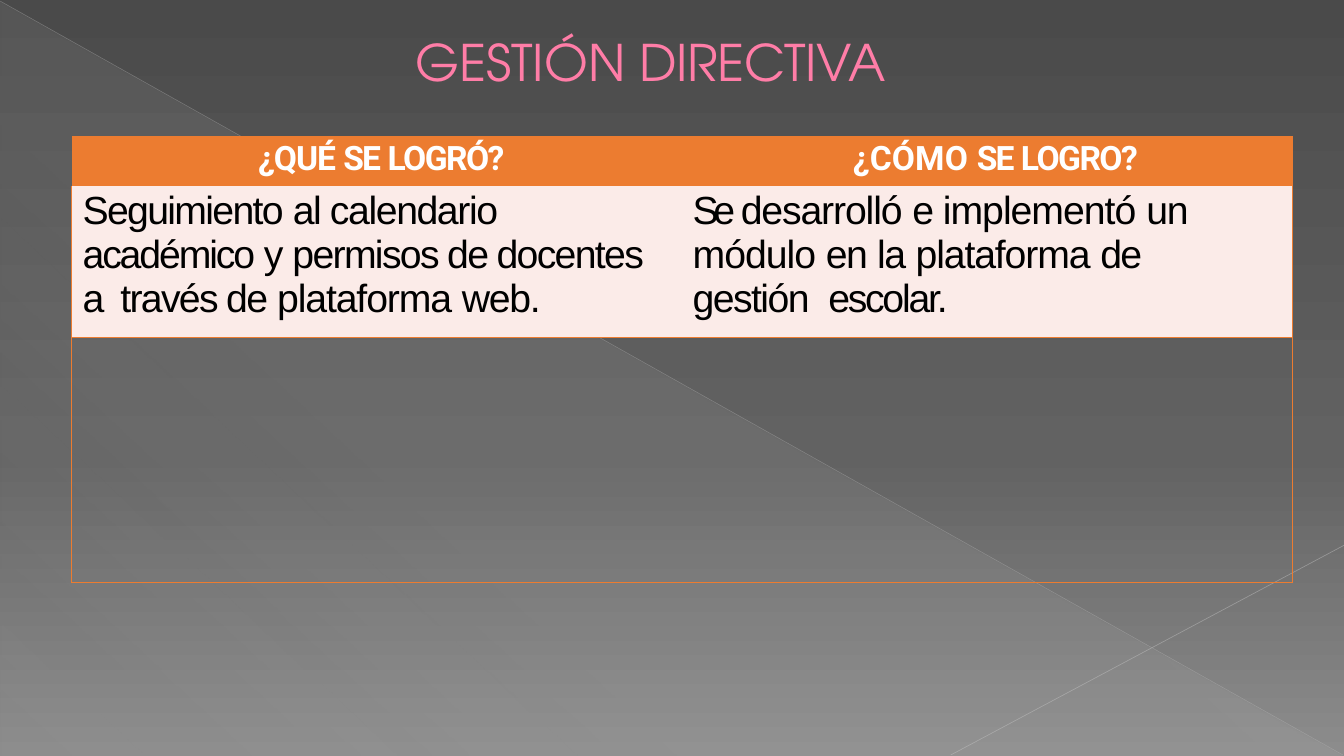
from lxml import etree
from pptx import Presentation
from pptx.dml.color import RGBColor
from pptx.enum.shapes import MSO_CONNECTOR, MSO_SHAPE
from pptx.enum.text import MSO_ANCHOR, MSO_AUTO_SIZE, PP_ALIGN
from pptx.oxml.ns import qn
from pptx.util import Inches, Pt

STRAIGHT = MSO_CONNECTOR.STRAIGHT
RIGHT_TRIANGLE = MSO_SHAPE.RIGHT_TRIANGLE
MIDDLE = MSO_ANCHOR.MIDDLE
TOP = MSO_ANCHOR.TOP
GROW = MSO_AUTO_SIZE.SHAPE_TO_FIT_TEXT
LEFT = PP_ALIGN.LEFT

BLACK = RGBColor(0x00, 0x00, 0x00)
WHITE = RGBColor(0xFF, 0xFF, 0xFF)
PINK = RGBColor(0xFF, 0x7D, 0xA7)
DARK_PINK = RGBColor(0xB1, 0x27, 0x61)
ORANGE = RGBColor(0xEC, 0x7C, 0x30)
PALE_PINK = RGBColor(0xFB, 0xEB, 0xE8)
DARK_GREY = RGBColor(0x4A, 0x4A, 0x4A)
MIDDLE_GREY = RGBColor(0x62, 0x62, 0x62)
LIGHT_GREY = RGBColor(0x8C, 0x8C, 0x8C)
VEIL_GREY = RGBColor(0xD2, 0xD2, 0xD2)
LONG_LINE_GREY = RGBColor(0xBF, 0xBF, 0xBF)
SHORT_LINE_GREY = RGBColor(0xC6, 0xC6, 0xC6)

PLAIN_TABLE_STYLE = "{2D5ABB26-0587-4C30-8999-92F81FD0307C}"

TITLE = [("GESTIÓN ", 0), ("DIRECTIVA", -0.3)]
HEADINGS = [
    (1.85, [("¿QUÉ ", -0.7), ("SE ", -1.4), ("LOGRÓ?", -1.1)]),
    (1.73, [("¿CÓMO ", 0.1), ("SE ", -1.4), ("LOGRO?", -1.1)]),
]
ANSWERS = [
    (0.11, 0.2, "L", [
        ("Seguimiento ", -1.2), ("al calendario ", -1), ("académico ", -1.5),
        ("y ", -1.4), ("permisos de docentes ", -1.2), ("a  ", -2.1),
        ("través de ", -1.2), ("plataforma ", -0.8), ("web.", -0.9)]),
    (0.14, 0.6, "R", [
        ("Se ", -3.8), ("desarrolló ", -0.8), ("e ", -1.6),
        ("implementó ", -0.7), ("un ", -0.8), ("módulo ", -0.7),
        ("en ", -1.2), ("la ", -1), ("plataforma ", -0.8), ("de ", -1.2),
        ("gestión  ", -1.1), ("escolar.", -1.6)]),
]


def add_color(parent, color, opacity=100):
    """Append a colour with its opacity in percent."""
    element = etree.SubElement(parent, qn("a:srgbClr"), val=str(color))
    if opacity < 100:
        etree.SubElement(element, qn("a:alpha"), val=str(opacity * 1000))


def set_gradient(fill, owner, stops, angle):
    """Give a fill a linear gradient of (position, colour, opacity) stops."""
    fill.gradient()
    gradient = next(owner.iter(qn("a:gradFill")))
    for child in list(gradient):
        gradient.remove(child)
    stop_list = etree.SubElement(gradient, qn("a:gsLst"))
    for position, color, opacity in stops:
        stop = etree.SubElement(stop_list, qn("a:gs"), pos=str(position * 1000))
        add_color(stop, color, opacity)
    etree.SubElement(gradient, qn("a:lin"), ang=str(angle * 60000), scaled="0")


def make_line(tag, color, width):
    """Build a solid line element."""
    line = etree.Element(qn(tag), w=str(Pt(width)))
    add_color(etree.SubElement(line, qn("a:solidFill")), color)
    return line


def add_line(slide, start, end, color, width, opacity):
    """Draw a thin translucent line."""
    points = [Inches(value) for value in (*start, *end)]
    connector = slide.shapes.add_connector(STRAIGHT, *points)
    connector.line.width = Pt(width)
    connector.line.color.rgb = color
    solid = next(connector.element.iter(qn("a:solidFill")))
    solid.clear()
    add_color(solid, color, opacity)
    etree.SubElement(connector.element.spPr, qn("a:effectLst"))


def add_backdrop(slide):
    """Paint the background, the veil and the two diagonal lines."""
    set_gradient(slide.background.fill, slide.element,
                 [(0, DARK_GREY, 100), (60, MIDDLE_GREY, 100),
                  (100, LIGHT_GREY, 100)], 90)
    veil = slide.shapes.add_shape(RIGHT_TRIANGLE, Inches(0.01), Inches(0.02),
                                  Inches(13.31), Inches(7.48))
    veil.shadow.inherit = False
    veil.line.fill.background()
    set_gradient(veil.fill, veil.element,
                 [(0, VEIL_GREY, 10), (70, VEIL_GREY, 8),
                  (100, VEIL_GREY, 1)], 133)
    add_line(slide, (0, 0.01), (13.32, 7.49), LONG_LINE_GREY, 0.39, 35)
    add_line(slide, (13.33, 5.41), (9.43, 7.49), SHORT_LINE_GREY, 0.47, 45)


def write_runs(paragraph, pieces, font_name, size, color, bold, indent, space):
    """Fill a paragraph with runs of differing letter spacing."""
    paragraph.alignment = LEFT
    paragraph.space_before = Pt(space)
    properties = paragraph._p.get_or_add_pPr()
    properties.set("marL", str(Inches(indent)))
    properties.set("indent", "0")
    for text, spacing in pieces:
        run = paragraph.add_run()
        run.text = text
        run.font.name = font_name
        run.font.size = Pt(size)
        run.font.bold = bold
        run.font.color.rgb = color
        run.font._element.set("spc", str(round(spacing * 100)))


def format_title(title):
    """Place and write the slide title."""
    title.left, title.top = Inches(4.11), Inches(0.29)
    title.width, title.height = Inches(5.08), Inches(0.63)
    frame = title.text_frame
    frame.word_wrap = True
    frame.auto_size = GROW
    frame.vertical_anchor = MIDDLE
    frame.margin_left = frame.margin_right = frame.margin_bottom = 0
    frame.margin_top = Inches(0.01)
    paragraph = frame.paragraphs[0]
    write_runs(paragraph, TITLE, "TeX Gyre Adventor", 36, PINK, False, 0.01, 1)
    for run in paragraph.runs:
        run.font._element.insert(0, make_line("a:ln", DARK_PINK, 0.5))


def format_cell(cell, color, margin_right=0):
    """Set the fill and margins of a cell."""
    cell.fill.solid()
    cell.fill.fore_color.rgb = color
    cell.vertical_anchor = TOP
    cell.margin_left = cell.margin_bottom = 0
    cell.margin_right = Inches(margin_right)
    cell.margin_top = Inches(0.03)


def set_borders(cell, sides):
    """Draw orange borders on the sides named by letter, in L R T B order."""
    properties = cell._tc.get_or_add_tcPr()
    for index, side in enumerate(sides):
        properties.insert(index, make_line(f"a:ln{side}", ORANGE, 1))


def add_results_table(slide):
    """Add the table of achievements and how they were reached."""
    table = slide.shapes.add_table(3, 2, Inches(0.71), Inches(1.35),
                                   Inches(12.11), Inches(4.43)).table
    table.first_row = table.horz_banding = False
    next(table._tbl.iter(qn("a:tableStyleId"))).text = PLAIN_TABLE_STYLE
    for column, width in zip(table.columns, (6.02, 6.09)):
        column.width = Inches(width)
    for row, height in zip(table.rows, (0.5, 1.5, 2.43)):
        row.height = Inches(height)
    for index, (indent, pieces) in enumerate(HEADINGS):
        cell = table.cell(0, index)
        format_cell(cell, ORANGE)
        write_runs(cell.text_frame.paragraphs[0], pieces, "Roboto", 24, WHITE,
                   True, indent, 2.2)
    for index, (indent, margin, side, pieces) in enumerate(ANSWERS):
        cell = table.cell(1, index)
        format_cell(cell, PALE_PINK, margin)
        set_borders(cell, side + "B")
        write_runs(cell.text_frame.paragraphs[0], pieces, "Arial", 28, BLACK,
                   False, indent, 1.9)
    empty_cell = table.cell(2, 0)
    empty_cell.merge(table.cell(2, 1))
    empty_cell.fill.background()
    set_borders(empty_cell, "LRTB")


def main():
    """Build the slide and save it."""
    presentation = Presentation()
    presentation.slide_width = Inches(13.33)
    presentation.slide_height = Inches(7.5)
    slide = presentation.slides.add_slide(presentation.slide_layouts[5])
    add_backdrop(slide)
    format_title(slide.shapes.title)
    add_results_table(slide)
    presentation.save("out.pptx")


if __name__ == "__main__":
    main()
